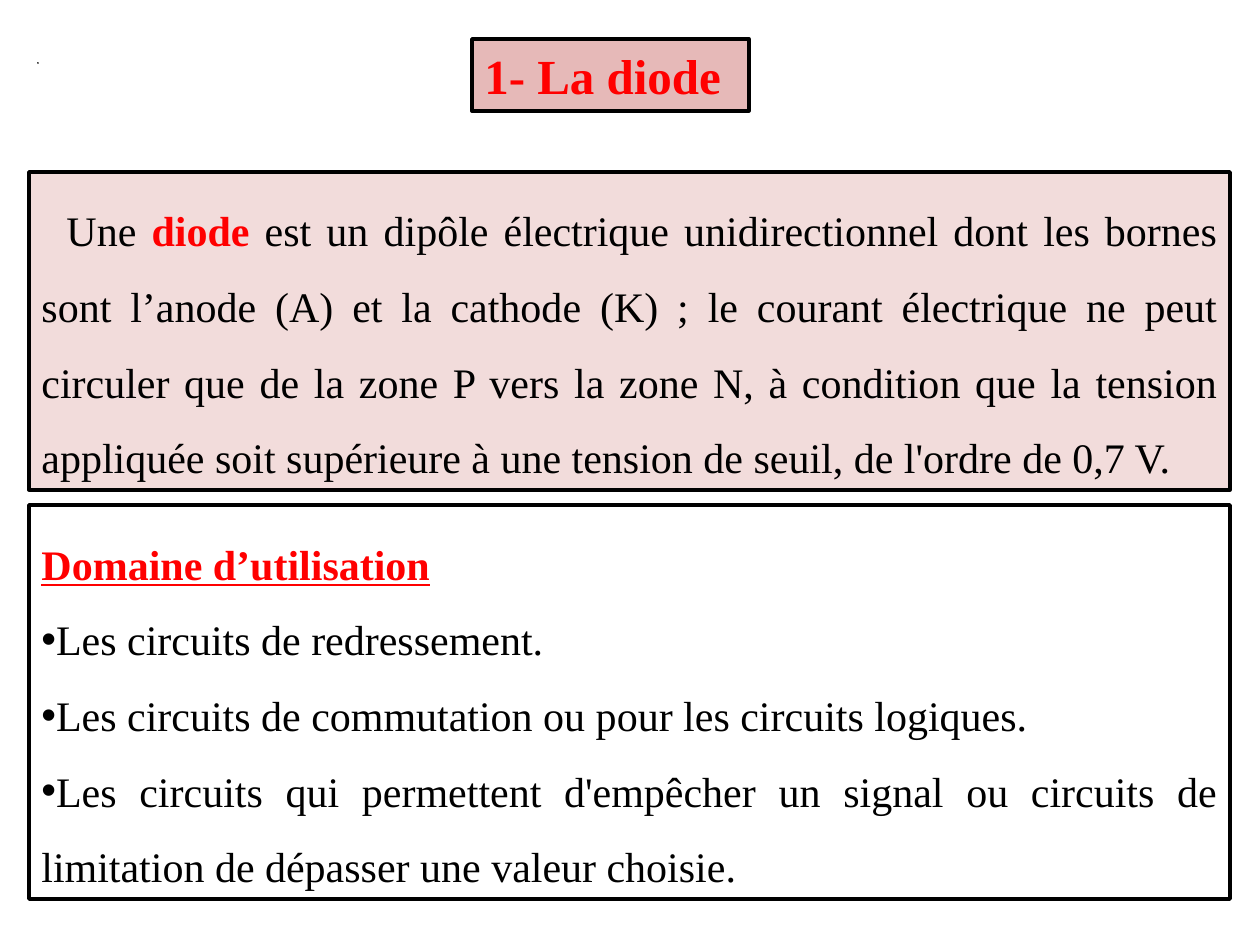
from lxml.etree import SubElement
from pptx import Presentation
from pptx.dml.color import RGBColor
from pptx.enum.shapes import MSO_SHAPE as Shape
from pptx.enum.text import MSO_ANCHOR as Anchor, MSO_AUTO_SIZE as Fit, PP_ALIGN as Align
from pptx.oxml.ns import qn
from pptx.util import Pt

SCALE = 914400 / 126
RED = "FF0000"
BLACK = "000000"


def px(n):
    return round(n * SCALE)


def tint(code):
    return RGBColor.from_string(code)


class Page:
    face = "Times New Roman"
    frame = {"word_wrap": True, "vertical_anchor": Anchor.MIDDLE,
             "auto_size": Fit.SHAPE_TO_FIT_TEXT}

    def __init__(self, deck):
        self.slide = deck.slides.add_slide(deck.slide_layouts[6])

    def box(self, x, y, w, h, fill, line=2):
        box = self.slide.shapes.add_shape(Shape.RECTANGLE, *map(px, (x, y, w, h)))
        box.shadow.inherit = False
        box.fill.solid()
        box.fill.fore_color.rgb = tint(fill)
        box.line.color.rgb = tint(BLACK)
        box.line.width = Pt(line)
        return box

    def text(self, box, paras, size=24, space=1.5, align=Align.JUSTIFY, indent=0, tab=None):
        frame = box.text_frame
        for key, val in self.frame.items():
            setattr(frame, key, val)
        for i, (mark, runs) in enumerate(paras):
            para = frame.add_paragraph() if i else frame.paragraphs[0]
            for key, val in {"alignment": align, "line_spacing": space}.items():
                setattr(para, key, val)
            self.lead(para, mark, indent, tab)
            for words, look in runs:
                self.run(para, words, size, look)

    def lead(self, para, mark, indent, tab):
        props = para._p.get_or_add_pPr()
        props.set("marL", "0")
        props.set("indent", str(px(indent)))
        if mark:
            SubElement(props, qn("a:buFont"), typeface="Arial")
            SubElement(props, qn("a:buChar"), char=mark)
        if tab:
            tabs = SubElement(props, qn("a:tabLst"))
            SubElement(tabs, qn("a:tab"), pos=str(px(tab)), algn="l")

    def run(self, para, words, size, look):
        run = para.add_run()
        run.text = words
        look = {"name": self.face, "size": Pt(size), "color": BLACK, **look}
        run.font.color.rgb = tint(look.pop("color"))
        for key, val in look.items():
            setattr(run.font, key, val)


def main():
    deck = Presentation()
    deck.slide_width, deck.slide_height = px(1260), px(945)
    page = Page(deck)
    bold = {"bold": True, "color": RED}

    page.box(38, 63, 0, 0, "4F81BD", 0.75)

    title = page.box(472, 39, 277, 72, "E6B9B8")
    page.text(title, [("", [("1- La diode", bold)])], size=28, space=1, align=Align.LEFT)

    about = page.box(29, 172, 1201, 318, "F2DCDB")
    page.text(about, [("", [
        ("Une ", {}),
        ("diode", bold),
        (" est un dipôle électrique unidirectionnel dont les bornes sont l’anode (A) "
         "et la cathode (K) ; le courant électrique ne peut circuler que de la zone P "
         "vers la zone N, à condition que la tension appliquée soit supérieure à une "
         "tension de seuil, de l'ordre de 0,7 V.", {}),
    ])], indent=25)

    uses = [
        "Les circuits de redressement.",
        "Les circuits de commutation ou pour les circuits logiques.",
        "Les circuits qui permettent d'empêcher un signal ou circuits de limitation "
        "de dépasser une valeur choisie.",
    ]
    head = ("", [("Domaine d’utilisation", {**bold, "underline": True})])
    field = page.box(29, 505, 1201, 394, "FFFFFF")
    page.text(field, [head] + [("•", [(use, {})]) for use in uses], tab=25)

    deck.save("out.pptx")


if __name__ == "__main__":
    main()
